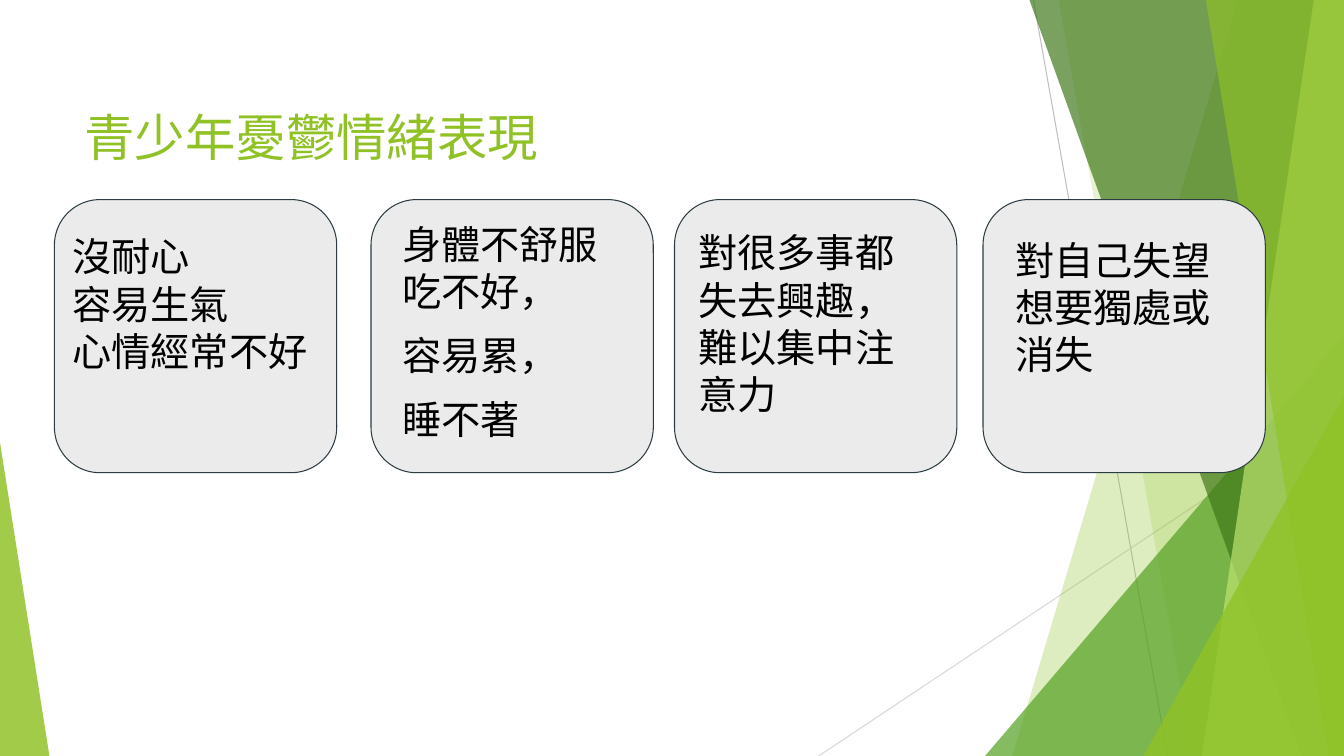
"""Build a slide with four cards on how low mood shows in teenagers."""
import pptx
import pptx.util
import pptx.dml.color
import pptx.enum.shapes
import pptx.enum.text
import lxml.etree

Inches = pptx.util.Inches
Pt = pptx.util.Pt
KIND = pptx.enum.shapes.MSO_SHAPE
W, H = 13.33, 7.5
TITLE = "青少年憂鬱情緒表現"
CARD_Y, CARD_W, CARD_H = 1.98, 2.8, 2.71
# card left, text box, space before, space after, paragraphs
CARDS = [
    (0.54, (0.62, 2.26, 2.59, 1.92), 0, 0, ["沒耐心\v容易生氣\v心情經常不好"]),
    (3.68, (3.89, 2.14, 2.26, 2.64), 12, 0,
     ["身體不舒服\v吃不好，", "容易累，", "睡不著"]),
    (6.69, (6.83, 2.22, 2.26, 1.99), 0, 0, ["對很多事都失去興趣，難以集中注意力"]),
    (9.75, (9.97, 2.29, 2.36, 2.21), 6, 6, ["對自己失望\v想要獨處或消失"]),
]
RAYS = [((10.25, 0), (11.58, H), "BFBFBF"), ((W, 4.03), (8.12, H), "D8D8D8")]
# bands: top left x, bottom left x; wedges: left, top, width, apex
DECOR = [
    ("band", (12.28, 10.04), "90C226", 29),
    ("band", (10.5, 11.83), "90C226", 20),
    ("wedge", (9.77, 3.33, 3.56, 1), "54A021", 71),
    ("band", (10.21, 12.91), "3F7818", 69),
    ("band", (13.03, 11.92), "BFE471", 69),
    ("band", (11.96, 13.18), "90C226", 64),
    ("wedge", (11.34, 3.93, 1.99, 1), "90C226", 80),
    ("wedge", (0, 4.39, 0.49, 0), "90C226", 84),
]


def rgb(code):
    return pptx.dml.color.RGBColor.from_string(code)


def paint(shape, color, alpha=100, edge=None):
    shape.shadow.inherit = False
    shape.fill.solid()
    shape.fill.fore_color.rgb = rgb(color)
    if alpha < 100:
        tint = shape.fill._xPr.find(".//" + pptx.oxml.ns.qn("a:srgbClr"))
        lxml.etree.SubElement(tint, pptx.oxml.ns.qn("a:alpha"), val=str(alpha * 1000))
    if edge:
        shape.line.color.rgb = rgb(edge)
        shape.line.width = Pt(0.75)
    else:
        shape.line.fill.background()


def ray(shapes, start, end, color):
    line = shapes.add_connector(pptx.enum.shapes.MSO_CONNECTOR.STRAIGHT,
                                *map(Inches, start + end))
    line.line.color.rgb = rgb(color)
    line.line.width = Pt(0.75)
    lxml.etree.SubElement(line._element.spPr, pptx.oxml.ns.qn("a:effectLst"))


def band(shapes, top, base):
    pen = shapes.build_freeform(Inches(top), 0, scale=1.0)
    pen.add_line_segments([(Inches(x), Inches(y)) for x, y in
                           [(W, 0), (W, H), (base, H)]], close=True)
    return pen.convert_to_shape()


def wedge(shapes, left, top, width, apex):
    shape = shapes.add_shape(KIND.ISOSCELES_TRIANGLE,
                             *map(Inches, (left, top, width, H - top)))
    shape.adjustments[0] = apex
    return shape


def write(shapes, box, paras, size, font, color, before=0, after=0):
    frame = shapes.add_textbox(*map(Inches, box)).text_frame
    frame.word_wrap = True
    frame.text = "\n".join(paras)
    for para in frame.paragraphs:
        para.font.size = Pt(size)
        para.font.name = font
        para.font.color.rgb = rgb(color)
        para.space_before = Pt(before)
        para.space_after = Pt(after)
    return frame


def main():
    deck = pptx.Presentation()
    deck.slide_width, deck.slide_height = Inches(W), Inches(H)
    shapes = deck.slides.add_slide(deck.slide_layouts[6]).shapes
    for start, end, color in RAYS:
        ray(shapes, start, end, color)
    draw = {"band": band, "wedge": wedge}
    for kind, size, color, alpha in DECOR:
        paint(draw[kind](shapes, *size), color, alpha)
    head = write(shapes, (0.74, 0.67, 9.4, 1.44), [TITLE], 36, "Karla", "90C226")
    head.vertical_anchor = pptx.enum.text.MSO_ANCHOR.MIDDLE
    head.paragraphs[0].line_spacing = 0.9
    for left, box, before, after, paras in CARDS:
        card = shapes.add_shape(KIND.ROUNDED_RECTANGLE,
                                *map(Inches, (left, CARD_Y, CARD_W, CARD_H)))
        paint(card, "EBEBEB", edge="2C3C43")
        text = write(shapes, box, paras, 28, "Arial", "000000", before, after)
        text.paragraphs[0].space_before = Pt(before if after else 0)
    deck.save("out.pptx")


if __name__ == "__main__":
    main()
